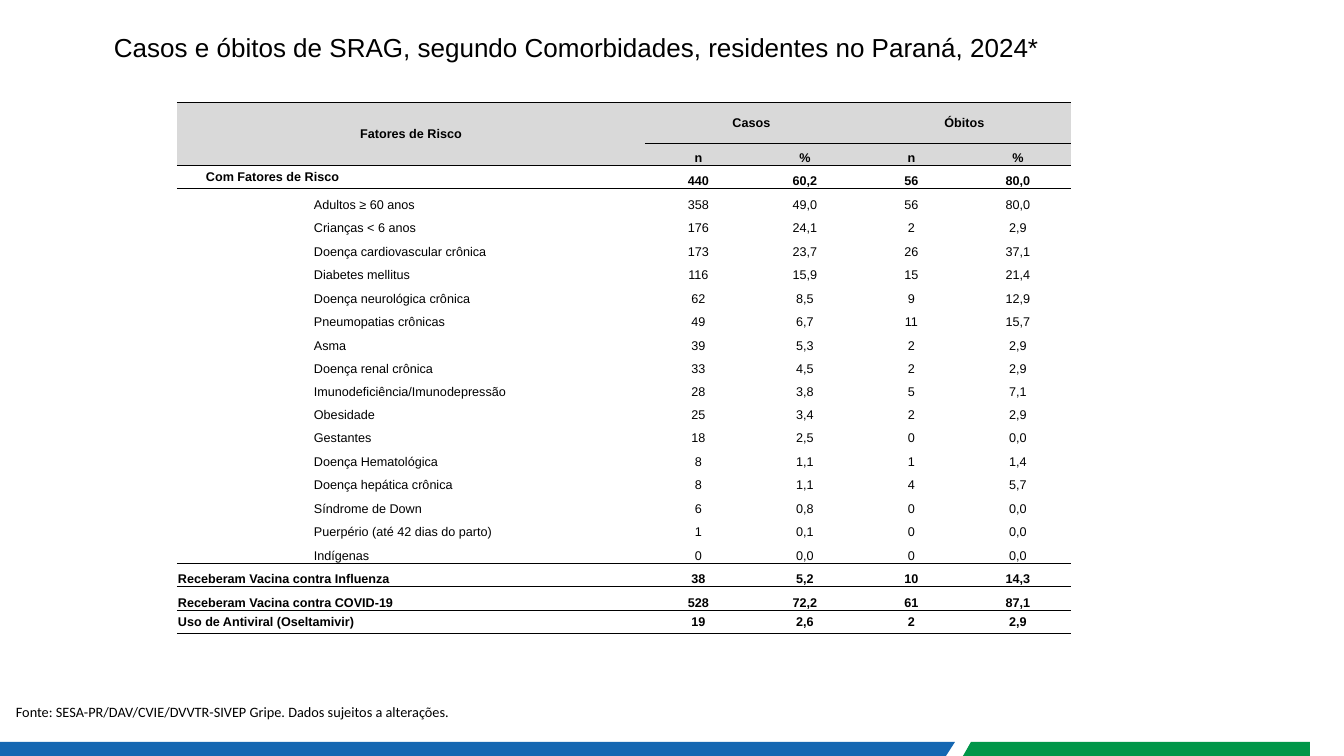
from lxml.etree import SubElement
from pptx import Presentation
from pptx.dml.color import RGBColor
from pptx.enum.shapes import MSO_SHAPE as Shape
from pptx.enum.text import MSO_ANCHOR as Anchor, MSO_AUTO_SIZE as AutoSize, PP_ALIGN as Align
from pptx.oxml.ns import qn
from pptx.util import Pt

EMU_PER_PX = 914400 / 100.8
COLORS = {"text": "000000", "white": "FFFFFF", "header": "D9D9D9",
          "blue": "1567B2", "green": "009649"}
NO_STYLE = "{2D5ABB26-0587-4C30-8999-92F81FD0307C}"

COLUMN_WIDTHS = [136, 332, 107, 106, 107, 106]
HEADER_HEIGHTS = [41, 22]
BODY_HEIGHT = 469
TOTAL = ("Com Fatores de Risco", "440", "60,2", "56", "80,0")
FACTORS = [
    ("Adultos ≥ 60 anos", "358", "49,0", "56", "80,0"),
    ("Crianças < 6 anos", "176", "24,1", "2", "2,9"),
    ("Doença cardiovascular crônica", "173", "23,7", "26", "37,1"),
    ("Diabetes mellitus", "116", "15,9", "15", "21,4"),
    ("Doença neurológica crônica", "62", "8,5", "9", "12,9"),
    ("Pneumopatias crônicas", "49", "6,7", "11", "15,7"),
    ("Asma", "39", "5,3", "2", "2,9"),
    ("Doença renal crônica", "33", "4,5", "2", "2,9"),
    ("Imunodeficiência/Imunodepressão", "28", "3,8", "5", "7,1"),
    ("Obesidade", "25", "3,4", "2", "2,9"),
    ("Gestantes", "18", "2,5", "0", "0,0"),
    ("Doença Hematológica", "8", "1,1", "1", "1,4"),
    ("Doença hepática crônica", "8", "1,1", "4", "5,7"),
    ("Síndrome de Down", "6", "0,8", "0", "0,0"),
    ("Puerpério (até 42 dias do parto)", "1", "0,1", "0", "0,0"),
    ("Indígenas", "0", "0,0", "0", "0,0"),
]
TREATMENTS = [
    ("Receberam Vacina contra Influenza", "38", "5,2", "10", "14,3"),
    ("Receberam Vacina contra COVID-19", "528", "72,2", "61", "87,1"),
    ("Uso de Antiviral (Oseltamivir)", "19", "2,6", "2", "2,9"),
]


def px(length):
    return round(length * EMU_PER_PX)


def color(name):
    return RGBColor.from_string(COLORS[name])


def style_runs(paragraph, font_name, size, bold=False):
    for run in paragraph.runs:
        run.font.name = font_name
        run.font.size = Pt(size)
        run.font.bold = bold
        run.font.color.rgb = color("text")


def add_footer_bars(slide, left, top, width, height):
    right, bottom = left + width, top + height
    bars = {
        "blue": [(left, top), (left + 955, top), (left + 946, bottom), (left, bottom)],
        "green": [(left + 971, top), (right, top), (right, bottom), (left + 963, bottom)],
    }
    for name, points in bars.items():
        builder = slide.shapes.build_freeform(*points[0], scale=EMU_PER_PX)
        builder.add_line_segments(points[1:], close=True)
        bar = builder.convert_to_shape()
        bar.shadow.inherit = False
        bar.fill.solid()
        bar.fill.fore_color.rgb = color(name)
        bar.line.fill.background()


def add_border(cell, side):
    line = SubElement(cell._tc.get_or_add_tcPr(), qn(f"a:{side}"), w=str(Pt(0.5)))
    fill = SubElement(line, qn("a:solidFill"))
    SubElement(fill, qn("a:srgbClr"), val=COLORS["text"])


def table_rows():
    """Each row holds the text of its six cells."""
    rows = [("Fatores de Risco", "", "Casos", "", "Óbitos", ""),
            ("", "", "n", "%", "n", "%")]
    rows.append((TOTAL[0], "", *TOTAL[1:]))
    rows += [("", *factor) for factor in FACTORS]
    rows += [(label, "", *values) for label, *values in TREATMENTS]
    return rows


def add_risk_table(slide, left, top):
    rows = table_rows()
    header_count, last = len(HEADER_HEIGHTS), len(rows) - 1
    frame = slide.shapes.add_table(
        len(rows), len(COLUMN_WIDTHS), px(left), px(top),
        px(sum(COLUMN_WIDTHS)), px(sum(HEADER_HEIGHTS) + BODY_HEIGHT))
    table = frame.table
    table.first_row = table.horz_banding = False
    table._tbl.tblPr.find(qn("a:tableStyleId")).text = NO_STYLE

    # Column widths and row heights
    for column, width in zip(table.columns, COLUMN_WIDTHS):
        column.width = px(width)
    body_count = len(rows) - header_count
    edges = [round(BODY_HEIGHT * i / body_count) for i in range(body_count + 1)]
    heights = HEADER_HEIGHTS + [b - a for a, b in zip(edges, edges[1:])]
    for row, height in zip(table.rows, heights):
        row.height = px(height)

    # Merged cells
    factor_rows = range(header_count + 1, header_count + 1 + len(FACTORS))
    emphasized = [r for r in range(len(rows)) if r not in factor_rows]
    table.cell(0, 0).merge(table.cell(1, 1))
    for c in (2, 4):
        table.cell(0, c).merge(table.cell(0, c + 1))
    for r in emphasized[header_count:]:
        table.cell(r, 0).merge(table.cell(r, 1))

    # Cell text, borders and fills
    for r, texts in enumerate(rows):
        for c, text in enumerate(texts):
            cell = table.cell(r, c)
            is_label = c < 2
            is_total = r == header_count and is_label
            cell.margin_left = px(29 if is_total else 1)
            cell.margin_right = cell.margin_top = px(1)
            cell.margin_bottom = 0
            centered = r in (0, last) or is_total
            cell.vertical_anchor = Anchor.MIDDLE if centered else Anchor.BOTTOM
            paragraph = cell.text_frame.paragraphs[0]
            if text:
                paragraph.text = text
                left_aligned = is_label and r >= header_count
                paragraph.alignment = Align.LEFT if left_aligned else Align.CENTER
                style_runs(paragraph, "Arial", 9, r in emphasized)
            else:
                SubElement(paragraph._p, qn("a:endParaRPr"), sz="900")
            if r in emphasized:
                if not (r == 1 and is_label):
                    add_border(cell, "lnT")
                add_border(cell, "lnB")
            cell.fill.solid()
            cell.fill.fore_color.rgb = color("header" if r < header_count else "white")


def add_source_note(slide, left, top, width, height):
    box = slide.shapes.add_textbox(px(left), px(top), px(width), px(height))
    box.text_frame.word_wrap = False
    box.text_frame.auto_size = AutoSize.SHAPE_TO_FIT_TEXT
    box.text_frame.text = ("Fonte: SESA-PR/DAV/CVIE/DVVTR-SIVEP Gripe. "
                           "Dados sujeitos a alterações.")
    paragraph = box.text_frame.paragraphs[0]
    paragraph.line_spacing = 0.93
    style_runs(paragraph, "Calibri", 10.2)


def add_title(slide, left, top, width, height):
    title = slide.shapes.add_shape(Shape.RECTANGLE, px(left), px(top), px(width), px(height))
    title.shadow.inherit = False
    title.line.fill.background()
    title.fill.solid()
    title.fill.fore_color.rgb = color("white")
    tint = title._element.spPr.find(qn("a:solidFill")).find(qn("a:srgbClr"))
    SubElement(tint, qn("a:alpha"), val="10000")
    text_frame = title.text_frame
    text_frame.word_wrap = True
    text_frame.auto_size = AutoSize.SHAPE_TO_FIT_TEXT
    text_frame.vertical_anchor = Anchor.TOP
    text_frame.text = "Casos e óbitos de SRAG, segundo Comorbidades, residentes no Paraná, 2024*"
    text_frame.paragraphs[0].alignment = Align.LEFT
    style_runs(text_frame.paragraphs[0], "Arial", 18.6)


def main():
    presentation = Presentation()
    presentation.slide_width, presentation.slide_height = px(1344), px(756)
    slide = presentation.slides.add_slide(presentation.slide_layouts[6])
    add_footer_bars(slide, 0, 742, 1310, 14)
    add_risk_table(slide, 177, 102)
    add_source_note(slide, 6, 700, 474, 26)
    add_title(slide, 104, 27, 1109, 41)
    presentation.save("out.pptx")


if __name__ == "__main__":
    main()
